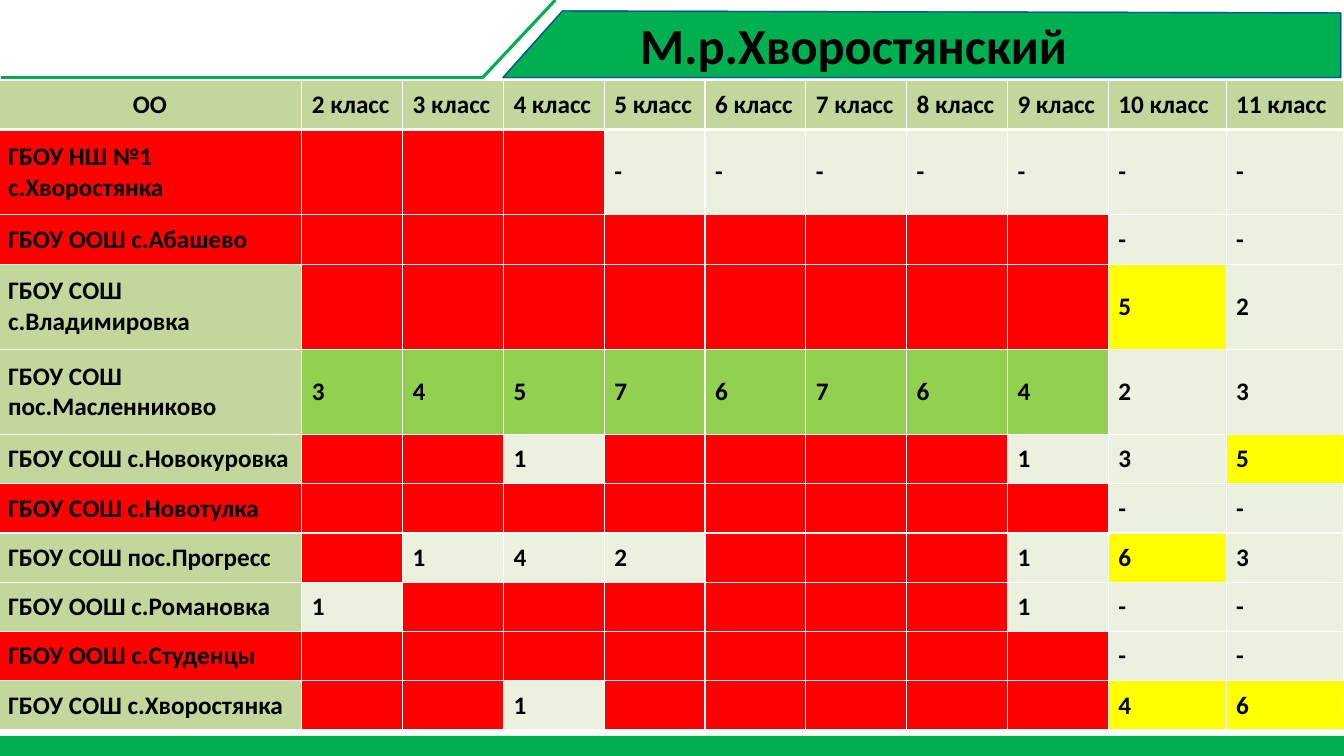
from lxml import etree
from pptx import Presentation
from pptx.dml.color import RGBColor
from pptx.enum.shapes import MSO_CONNECTOR, MSO_SHAPE
from pptx.enum.text import MSO_ANCHOR, MSO_AUTO_SIZE, PP_ALIGN
from pptx.oxml.ns import qn
from pptx.util import Pt

STRAIGHT = MSO_CONNECTOR.STRAIGHT
RECTANGLE = MSO_SHAPE.RECTANGLE
TOP, MIDDLE = MSO_ANCHOR.TOP, MSO_ANCHOR.MIDDLE
NO_AUTOFIT = MSO_AUTO_SIZE.NONE
LEFT, CENTER = PP_ALIGN.LEFT, PP_ALIGN.CENTER

FONT = "Calibri"
BLACK, WHITE, GREEN, BLUE = "000000", "FFFFFF", "00B050", "0C549E"
HEADER, PLAIN, MISSING = "C3D69B", "EBF1DE", "FF0000"
COMPLETE, SENIOR_MET = "92D050", "FFFF00"

SLIDE_W, SLIDE_H = 960, 540
LABEL_W, CLASS_W, SENIOR_W = 217, 72, 84.2
ROW_H, TALL_ROW_H = 35.2, 60.9
JUNIOR_CLASSES = 8
SENIOR_MINIMUM = 4

SCHOOLS = [
    ("ГБОУ НШ №1 с.Хворостянка", ["", "", "", "-", "-", "-", "-", "-", "-", "-"]),
    ("ГБОУ ООШ с.Абашево", [""] * 8 + ["-", "-"]),
    ("ГБОУ СОШ с.Владимировка", [""] * 8 + ["5", "2"]),
    ("ГБОУ СОШ пос.Масленниково", ["3", "4", "5", "7", "6", "7", "6", "4", "2", "3"]),
    ("ГБОУ СОШ с.Новокуровка", ["", "", "1", "", "", "", "", "1", "3", "5"]),
    ("ГБОУ СОШ с.Новотулка", [""] * 8 + ["-", "-"]),
    ("ГБОУ СОШ пос.Прогресс", ["", "1", "4", "2", "", "", "", "1", "6", "3"]),
    ("ГБОУ ООШ с.Романовка", ["1", "", "", "", "", "", "", "1", "-", "-"]),
    ("ГБОУ ООШ с.Студенцы", [""] * 8 + ["-", "-"]),
    ("ГБОУ СОШ с.Хворостянка", ["", "", "1", "", "", "", "", "", "4", "6"]),
]
TALL_ROWS = (1, 3, 4)


def rgb(color):
    return RGBColor.from_string(color)


def add_run(p, text, size):
    r = p.add_run()
    r.text = text
    r.font.name = FONT
    r.font.size = Pt(size)
    r.font.bold = True
    r.font.color.rgb = rgb(BLACK)


def add_line(s, x1, y1, x2, y2):
    line = s.shapes.add_connector(STRAIGHT, Pt(x1), Pt(y1), Pt(x2), Pt(y2))
    line.line.color.rgb = rgb(GREEN)
    line.line.width = Pt(2.25)
    etree.SubElement(line._element.spPr, qn("a:effectLst"))


def add_banner(s, x, y, w, h):
    corners = [(x + 42.5, y), (x + w, y + 1.4), (x + w, y + h), (x, y + h)]
    points = [(Pt(px), Pt(py)) for px, py in corners]
    for fill, outline in ((GREEN, GREEN), (None, BLUE)):
        builder = s.shapes.build_freeform(*points[0])
        builder.add_line_segments(points[1:], close=True)
        sp = builder.convert_to_shape()
        sp.shadow.inherit = False
        if fill:
            sp.fill.solid()
            sp.fill.fore_color.rgb = rgb(fill)
        else:
            sp.fill.background()
        sp.line.color.rgb = rgb(outline)
        sp.line.width = Pt(1)


def add_accent_lines(s, x, y, w, h):
    bend = x + w - 52
    add_line(s, x + w, y, bend, y + h)
    add_line(s, bend, y + h, x, y + h)


def add_footer(s, x, y, w, h):
    sp = s.shapes.add_shape(RECTANGLE, Pt(x), Pt(y), Pt(w), Pt(h))
    sp.shadow.inherit = False
    sp.fill.solid()
    sp.fill.fore_color.rgb = rgb(GREEN)
    sp.line.fill.background()


def set_title(s, text, x, y, w, h):
    title = s.shapes.title
    title.left, title.top, title.width, title.height = Pt(x), Pt(y), Pt(w), Pt(h)
    tf = title.text_frame
    tf.auto_size = NO_AUTOFIT
    tf.word_wrap = True
    tf.vertical_anchor = TOP
    p = tf.paragraphs[0]
    p.alignment = LEFT
    add_run(p, text, 36)


def set_borders(cell, top, bottom):
    tcPr = cell._tc.get_or_add_tcPr()
    for side, width in (("L", 1), ("R", 1), ("T", top), ("B", bottom)):
        ln = etree.SubElement(tcPr, qn("a:ln" + side), w=str(Pt(width)))
        fill = etree.SubElement(ln, qn("a:solidFill"))
        etree.SubElement(fill, qn("a:srgbClr"), val=WHITE)


def school_fills(counts):
    junior = counts[:JUNIOR_CLASSES]
    label = HEADER if any(c.isdigit() for c in counts) else MISSING
    complete = all(c.isdigit() for c in junior)
    fills = [label]
    for i, count in enumerate(counts):
        if not count:
            fills.append(MISSING)
        elif i < JUNIOR_CLASSES:
            fills.append(COMPLETE if complete else PLAIN)
        else:
            met = count.isdigit() and int(count) >= SENIOR_MINIMUM
            fills.append(SENIOR_MET if met else PLAIN)
    return fills


def add_school_table(s, x, y):
    widths = [LABEL_W] + [CLASS_W] * JUNIOR_CLASSES + [SENIOR_W] * 2
    header = ["ОО"] + [f"{n} класс" for n in range(2, 12)]
    rows = [(header, [HEADER] * len(header))]
    rows += [([name] + counts, school_fills(counts)) for name, counts in SCHOOLS]
    heights = [TALL_ROW_H if i in TALL_ROWS else ROW_H for i in range(len(rows))]
    table = s.shapes.add_table(len(rows), len(widths), Pt(x), Pt(y),
                               Pt(sum(widths)), Pt(sum(heights))).table
    table.horz_banding = False
    for column, width in zip(table.columns, widths):
        column.width = Pt(width)
    for i, (texts, fills) in enumerate(rows):
        table.rows[i].height = Pt(heights[i])
        for j, (text, fill) in enumerate(zip(texts, fills)):
            cell = table.cell(i, j)
            cell.vertical_anchor = MIDDLE
            set_borders(cell, 3 if i == 1 else 1, 3 if i == 0 else 1)
            cell.fill.solid()
            cell.fill.fore_color.rgb = rgb(fill)
            if text:
                p = cell.text_frame.paragraphs[0]
                p.alignment = CENTER if i == j == 0 else LEFT
                add_run(p, text, 18)


def add_district_slide(prs):
    s = prs.slides.add_slide(prs.slide_layouts[5])
    add_banner(s, 359.3, 7.9, 598.3, 47.5)
    add_footer(s, 0, 525.6, SLIDE_W, 14.4)
    add_accent_lines(s, 0.7, 0, 396, 55.5)
    add_school_table(s, -1.4, 57.4)
    set_title(s, "М.р.Хворостянский", 450, 6.5, 390.2, 51)
    title = s.shapes.title._element
    title.getparent().append(title)


def main():
    prs = Presentation()
    prs.slide_width, prs.slide_height = Pt(SLIDE_W), Pt(SLIDE_H)
    add_district_slide(prs)
    prs.save("out.pptx")


if __name__ == "__main__":
    main()
